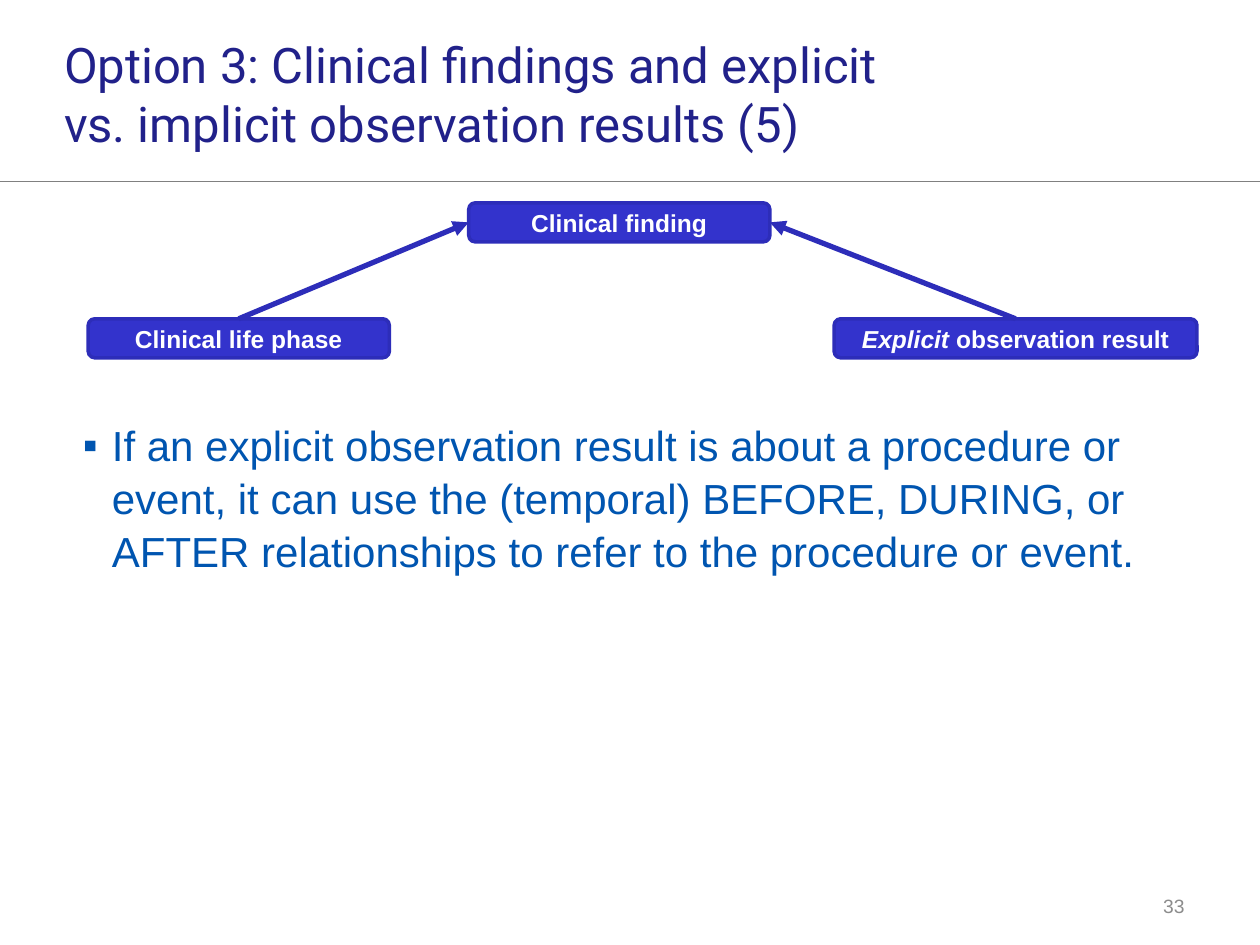
from pptx import Presentation
from pptx.dml.color import RGBColor
from pptx.enum.shapes import MSO_CONNECTOR, MSO_SHAPE
from pptx.enum.text import MSO_ANCHOR, PP_ALIGN
from pptx.oxml.ns import qn
from pptx.util import Inches, Pt
from lxml.etree import SubElement

WHITE = RGBColor(0xFF, 0xFF, 0xFF)
TITLE_BLUE = RGBColor(0x21, 0x21, 0x8A)
BODY_BLUE = RGBColor(0x00, 0x55, 0xB0)
NODE_FILL = RGBColor(0x33, 0x33, 0xCC)
NODE_LINE = RGBColor(0x2D, 0x2D, 0xB9)
RULE_GRAY = RGBColor(0x80, 0x80, 0x80)
NUMBER_GRAY = RGBColor(0x8C, 0x8C, 0x8C)

NODE_HEIGHT = 0.31
TOP, LEFT, RIGHT = 0, 1, 3


def style_font(font, size, color, name="Arial", bold=False):
    font.name = name
    font.size = Pt(size)
    font.bold = bold
    font.color.rgb = color


def add_text(page, text, left, top, width, height, size, color, name="Arial"):
    box = page.shapes.add_textbox(Inches(left), Inches(top), Inches(width), Inches(height))
    frame = box.text_frame
    frame.word_wrap = True
    frame.margin_left = frame.margin_right = Inches(0.1)
    frame.margin_top = frame.margin_bottom = Inches(0.1)
    frame.text = text
    style_font(frame.paragraphs[0].runs[0].font, size, color, name)
    return frame


def add_bullet(paragraph, symbol, color, margin, indent):
    properties = paragraph._p.get_or_add_pPr()
    properties.set("marL", str(Inches(margin)))
    properties.set("indent", str(Inches(indent)))
    bullet_color = SubElement(properties, qn("a:buClr"))
    SubElement(bullet_color, qn("a:srgbClr"), val=str(color))
    SubElement(properties, qn("a:buFont"), typeface="Arial")
    SubElement(properties, qn("a:buChar"), char=symbol)


def add_node(page, left, top, width, text, emphasis=""):
    node = page.shapes.add_shape(MSO_SHAPE.ROUNDED_RECTANGLE, Inches(left), Inches(top),
                                 Inches(width), Inches(NODE_HEIGHT))
    node.shadow.inherit = False
    node.fill.solid()
    node.fill.fore_color.rgb = NODE_FILL
    node.line.color.rgb = NODE_LINE
    node.line.width = Pt(2)
    frame = node.text_frame
    frame.vertical_anchor = MSO_ANCHOR.MIDDLE
    frame.margin_top = frame.margin_bottom = 0
    paragraph = frame.paragraphs[0]
    paragraph.alignment = PP_ALIGN.CENTER
    for words, italic in ((emphasis, True), (text, False)):
        if words:
            span = paragraph.add_run()
            span.text = words
            style_font(span.font, 14, WHITE, bold=True)
            span.font.italic = italic
    return node


def add_line(page, color, width, start=(0, 0), end=(0, 0)):
    line = page.shapes.add_connector(MSO_CONNECTOR.STRAIGHT,
                                     *(Inches(value) for value in start + end))
    line.line.color.rgb = color
    line.line.width = Pt(width)
    SubElement(line._element.spPr, qn("a:effectLst"))
    return line


def add_arrow(page, child, parent, side):
    arrow = add_line(page, NODE_LINE, 3)
    arrow.begin_connect(child, TOP)
    arrow.end_connect(parent, side)
    SubElement(arrow.line._get_or_add_ln(), qn("a:tailEnd"), type="triangle")


def main():
    deck = Presentation()
    deck.slide_width, deck.slide_height = Inches(10), Inches(7.5)
    page = deck.slides.add_slide(deck.slide_layouts[6])

    add_line(page, RULE_GRAY, 0.75, (0, 1.44), (10, 1.44))

    number = add_text(page, "33", 7.17, 7.03, 2.33, 0.32, 11, NUMBER_GRAY)
    number.margin_top = number.margin_bottom = Inches(0.05)
    number.vertical_anchor = MSO_ANCHOR.MIDDLE
    number.paragraphs[0].alignment = PP_ALIGN.RIGHT

    body = add_text(page, "If an explicit observation result is about a procedure or event, "
                    "it can use the (temporal) BEFORE, DURING, or AFTER relationships "
                    "to refer to the procedure or event.",
                    0.41, 3.21, 9.09, 3.14, 24, BODY_BLUE)
    body.paragraphs[0].line_spacing = 1.05
    add_bullet(body.paragraphs[0], "▪", BODY_BLUE, 0.38, -0.23)

    title = add_text(page, "Option 3: Clinical findings and explicit vs. implicit "
                     "observation results (5)",
                     0.41, 0.34, 7.21, 0.8, 28, TITLE_BLUE, "Roboto")
    title.margin_right = Inches(0.3)
    title.vertical_anchor = MSO_ANCHOR.MIDDLE

    finding = add_node(page, 3.72, 1.61, 2.39, "Clinical finding")
    phase = add_node(page, 0.7, 2.53, 2.39, "Clinical life phase")
    result = add_node(page, 6.62, 2.53, 2.88, " observation result", "Explicit")
    add_arrow(page, phase, finding, LEFT)
    add_arrow(page, result, finding, RIGHT)

    deck.save("out.pptx")


if __name__ == "__main__":
    main()
